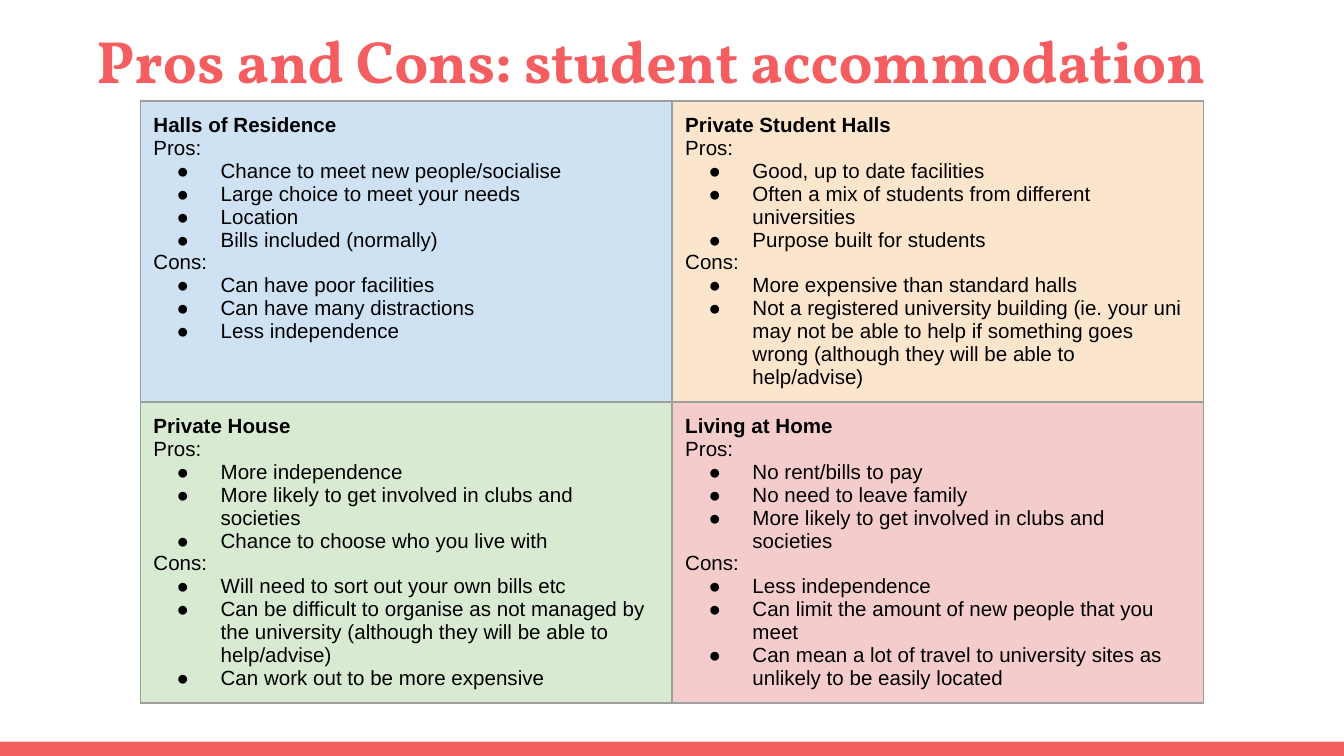
from lxml import etree
from pptx import Presentation
from pptx import util as u
from pptx.dml.color import RGBColor
from pptx.enum import shapes, text
from pptx.oxml.ns import qn

CORAL = RGBColor(0xF5, 0x5E, 0x61)
BLACK = RGBColor(0, 0, 0)
GREY = RGBColor(0x9E, 0x9E, 0x9E)
BLUE = RGBColor(0xCF, 0xE2, 0xF3)
ORANGE = RGBColor(0xFC, 0xE5, 0xCD)
GREEN = RGBColor(0xD9, 0xEA, 0xD3)
PINK = RGBColor(0xF4, 0xCC, 0xCC)
INSET = u.Cm(0.25)

# Heading, fill, pros and cons of each option, row by row
OPTIONS = [
    ("Halls of Residence", BLUE,
     ["Chance to meet new people/socialise",
      "Large choice to meet your needs",
      "Location",
      "Bills included (normally)"],
     ["Can have poor facilities",
      "Can have many distractions",
      "Less independence"]),
    ("Private Student Halls", ORANGE,
     ["Good, up to date facilities",
      "Often a mix of students from different universities",
      "Purpose built for students"],
     ["More expensive than standard halls",
      "Not a registered university building (ie. your uni may not be able to "
      "help if something goes wrong (although they will be able to help/advise)"]),
    ("Private House", GREEN,
     ["More independence",
      "More likely to get involved in clubs and societies",
      "Chance to choose who you live with"],
     ["Will need to sort out your own bills etc",
      "Can be difficult to organise as not managed by the university "
      "(although they will be able to help/advise)",
      "Can work out to be more expensive"]),
    ("Living at Home", PINK,
     ["No rent/bills to pay",
      "No need to leave family",
      "More likely to get involved in clubs and societies"],
     ["Less independence",
      "Can limit the amount of new people that you meet",
      "Can mean a lot of travel to university sites as unlikely to be easily located"]),
]


def add_line(frame, words, bold=False, bullet=False):
    """Fill the empty first paragraph, or add a new one."""
    paragraph = frame.paragraphs[0]
    if paragraph.runs:
        paragraph = frame.add_paragraph()
    if bullet:
        properties = paragraph._p.get_or_add_pPr()
        properties.set("marL", str(u.Cm(1.27)))
        properties.set("indent", str(u.Cm(-0.83)))
        colour = etree.SubElement(properties, qn("a:buClr"))
        etree.SubElement(colour, qn("a:srgbClr"), val=str(BLACK))
        etree.SubElement(properties, qn("a:buFont"), typeface="Arial")
        etree.SubElement(properties, qn("a:buChar"), char="●")
    run = paragraph.add_run()
    run.text = words
    run.font.name = "Arial"
    run.font.size = u.Pt(11)
    run.font.bold = bold
    run.font.color.rgb = BLACK


def set_borders(cell):
    properties = cell._tc.get_or_add_tcPr()
    for side in ("lnL", "lnR", "lnT", "lnB"):
        line = etree.SubElement(properties, qn("a:" + side), w=str(u.Pt(0.75)))
        fill = etree.SubElement(line, qn("a:solidFill"))
        etree.SubElement(fill, qn("a:srgbClr"), val=str(GREY))


presentation = Presentation()
presentation.slide_width = u.Cm(25.4)
presentation.slide_height = u.Cm(14.29)
slide = presentation.slides.add_slide(presentation.slide_layouts[5])

# Bottom bar
bar_height = u.Cm(0.27)
bar = slide.shapes.add_shape(
    shapes.MSO_SHAPE.RECTANGLE, 0, presentation.slide_height - bar_height,
    presentation.slide_width, bar_height)
bar.shadow.inherit = False
bar.fill.solid()
bar.fill.fore_color.rgb = CORAL
bar.line.fill.background()

# Title
title = slide.shapes.title
title.left, title.top = u.Cm(1.57), u.Cm(0.2)
title.width, title.height = u.Cm(22.25), u.Cm(1.09)
frame = title.text_frame
frame.margin_left = frame.margin_right = INSET
frame.margin_top = frame.margin_bottom = INSET
frame.word_wrap = True
frame.auto_size = text.MSO_AUTO_SIZE.NONE
frame.vertical_anchor = text.MSO_ANCHOR.TOP
paragraph = frame.paragraphs[0]
paragraph.alignment = text.PP_ALIGN.LEFT
run = paragraph.add_run()
run.text = "Pros and Cons: student accommodation"
run.font.name = "Vollkorn"
run.font.size = u.Pt(32)
run.font.bold = True
run.font.color.rgb = CORAL

# Two by two table of options
column_width, row_height = u.Cm(10.05), u.Cm(5.69)
table = slide.shapes.add_table(
    2, 2, u.Cm(2.65), u.Cm(1.91), 2 * column_width, 2 * row_height).table
table.first_row = False
table.horz_banding = False

for index, (heading, colour, pros, cons) in enumerate(OPTIONS):
    cell = table.cell(index // 2, index % 2)
    set_borders(cell)
    cell.fill.solid()
    cell.fill.fore_color.rgb = colour
    cell.margin_left = cell.margin_right = INSET
    cell.margin_top = cell.margin_bottom = INSET
    add_line(cell.text_frame, heading, bold=True)
    for label, points in (("Pros:", pros), ("Cons:", cons)):
        add_line(cell.text_frame, label)
        for point in points:
            add_line(cell.text_frame, point, bullet=True)

presentation.save("out.pptx")
